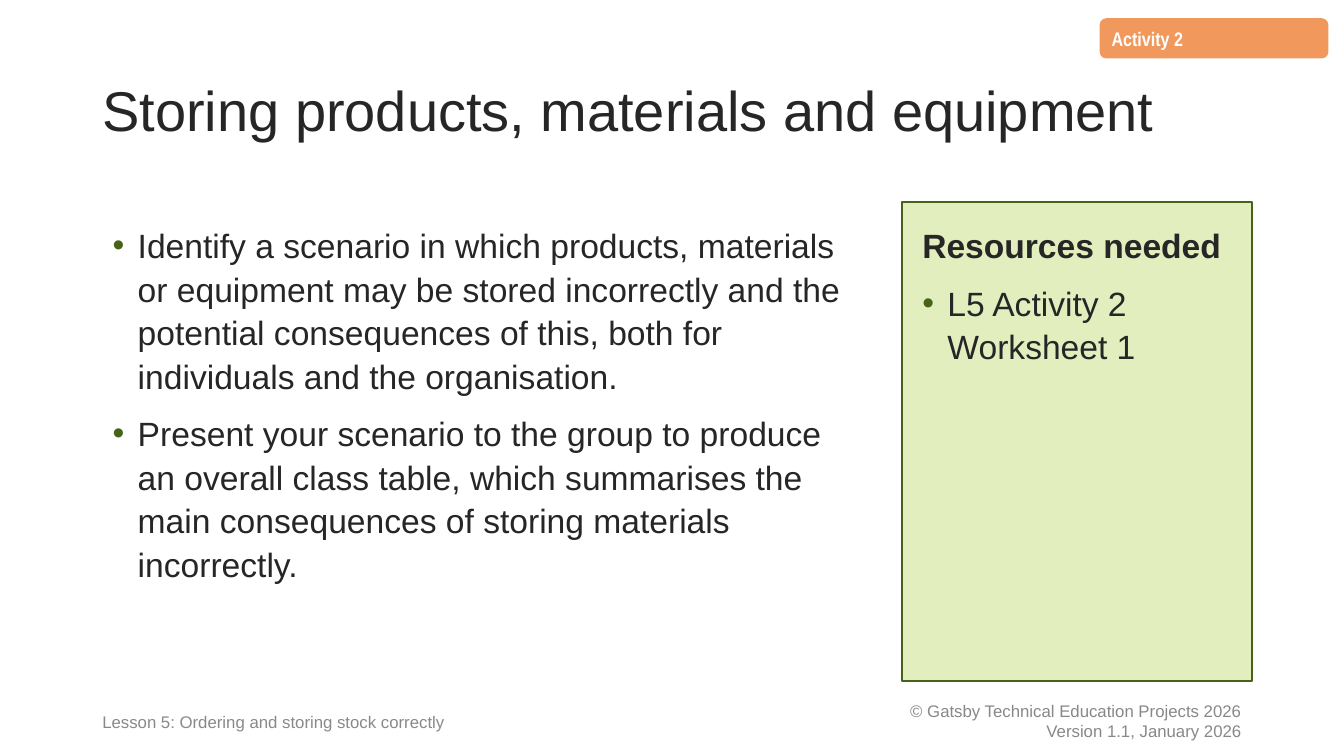
"""Build the Activity 2 slide on storing products, materials and equipment."""
from lxml import etree
from pptx import Presentation
from pptx.dml.color import RGBColor
from pptx.enum.shapes import MSO_SHAPE
from pptx.enum.text import MSO_ANCHOR, PP_ALIGN
from pptx.oxml.ns import qn
from pptx.util import Pt

RECTANGLE = MSO_SHAPE.RECTANGLE
TAG = MSO_SHAPE.FLOWCHART_ALTERNATE_PROCESS
TOP, MIDDLE = MSO_ANCHOR.TOP, MSO_ANCHOR.MIDDLE
LEFT, RIGHT = PP_ALIGN.LEFT, PP_ALIGN.RIGHT
DARK, GREEN = "262626", "466318"
MARGIN = 66
PANEL_TOP, PANEL_HEIGHT = 144, 342.7
FOOTER_TOP, FOOTER_HEIGHT = 500.4, 28.8


def color(value):
    return RGBColor.from_string(value)


def write_text(shape, paragraphs, size, ink, anchor=TOP, align=LEFT,
               spacing=1.08, font="Arial", inset=(7.2, 3.6)):
    frame = shape.text_frame
    across, down = (Pt(value) for value in inset)
    settings = {"word_wrap": True, "vertical_anchor": anchor,
                "margin_left": across, "margin_right": across,
                "margin_top": down, "margin_bottom": down}
    for name, value in settings.items():
        setattr(frame, name, value)
    for index, (text, bold, bulleted) in enumerate(paragraphs):
        paragraph = frame.add_paragraph() if index else frame.paragraphs[0]
        paragraph.alignment = align
        paragraph.line_spacing = spacing
        if bulleted:
            paragraph.space_before = Pt(10 if index else 0)
            properties = paragraph._p.get_or_add_pPr()
            properties.set("marL", str(Pt(18)))
            properties.set("indent", str(Pt(-18)))
            bullet_color = etree.SubElement(properties, qn("a:buClr"))
            etree.SubElement(bullet_color, qn("a:srgbClr"), val=GREEN)
            etree.SubElement(properties, qn("a:buFont"), typeface="Arial")
            etree.SubElement(properties, qn("a:buChar"), char="•")
        run = paragraph.add_run()
        run.text = text
        for name, value in {"name": font, "size": Pt(size), "bold": bold}.items():
            setattr(run.font, name, value)
        run.font.color.rgb = color(ink)


presentation = Presentation()
presentation.slide_width, presentation.slide_height = Pt(960), Pt(540)
slide = presentation.slides.add_slide(presentation.slide_layouts[6])

text_boxes = [
    ((MARGIN, 28.8, 828, 104.4),
     ["Storing products, materials and equipment"],
     {"size": 40, "ink": DARK, "spacing": 0.9}),
    ((MARGIN, FOOTER_TOP, 331.2, FOOTER_HEIGHT),
     ["Lesson 5: Ordering and storing stock correctly"],
     {"size": 12, "ink": "898989"}),
    ((570, FOOTER_TOP, 324, FOOTER_HEIGHT),
     ["© Gatsby Technical Education Projects 2026", "Version 1.1, January 2026"],
     {"size": 12, "ink": "888888", "align": RIGHT, "spacing": 1.0}),
]
for bounds, lines, text_format in text_boxes:
    box = slide.shapes.add_textbox(*map(Pt, bounds))
    write_text(box, [(line, False, False) for line in lines],
               anchor=MIDDLE, **text_format)

panel_format = {"size": 24, "ink": DARK, "inset": (14.4, 14.4)}
panels = [
    (TAG, (785.5, 13, 163.4, 28.8), "F1995D", None,
     [("Activity 2", True, False)],
     {"size": 14, "ink": "FFFFFF", "font": "Arial Narrow"}),
    (RECTANGLE, (MARGIN, PANEL_TOP, 558, PANEL_HEIGHT), "FFFFFF", None,
     [("Identify a scenario in which products, materials or equipment may be "
       "stored incorrectly and the potential consequences of this, both for "
       "individuals and the organisation.", False, True),
      ("Present your scenario to the group to produce an overall class table, "
       "which summarises the main consequences of storing materials "
       "incorrectly.", False, True)],
     panel_format),
    (RECTANGLE, (644.4, PANEL_TOP, 249.8, PANEL_HEIGHT), "E2EEBE", GREEN,
     [("Resources needed", True, False),
      ("L5 Activity 2 Worksheet 1", False, True)],
     panel_format),
]
for kind, bounds, fill, outline, paragraphs, text_format in panels:
    panel = slide.shapes.add_shape(kind, *map(Pt, bounds))
    panel.shadow.inherit = False
    panel.fill.solid()
    panel.fill.fore_color.rgb = color(fill)
    if outline:
        panel.line.color.rgb = color(outline)
        panel.line.width = Pt(1.5)
    else:
        panel.line.fill.background()
    write_text(panel, paragraphs, **text_format)

presentation.save("out.pptx")
